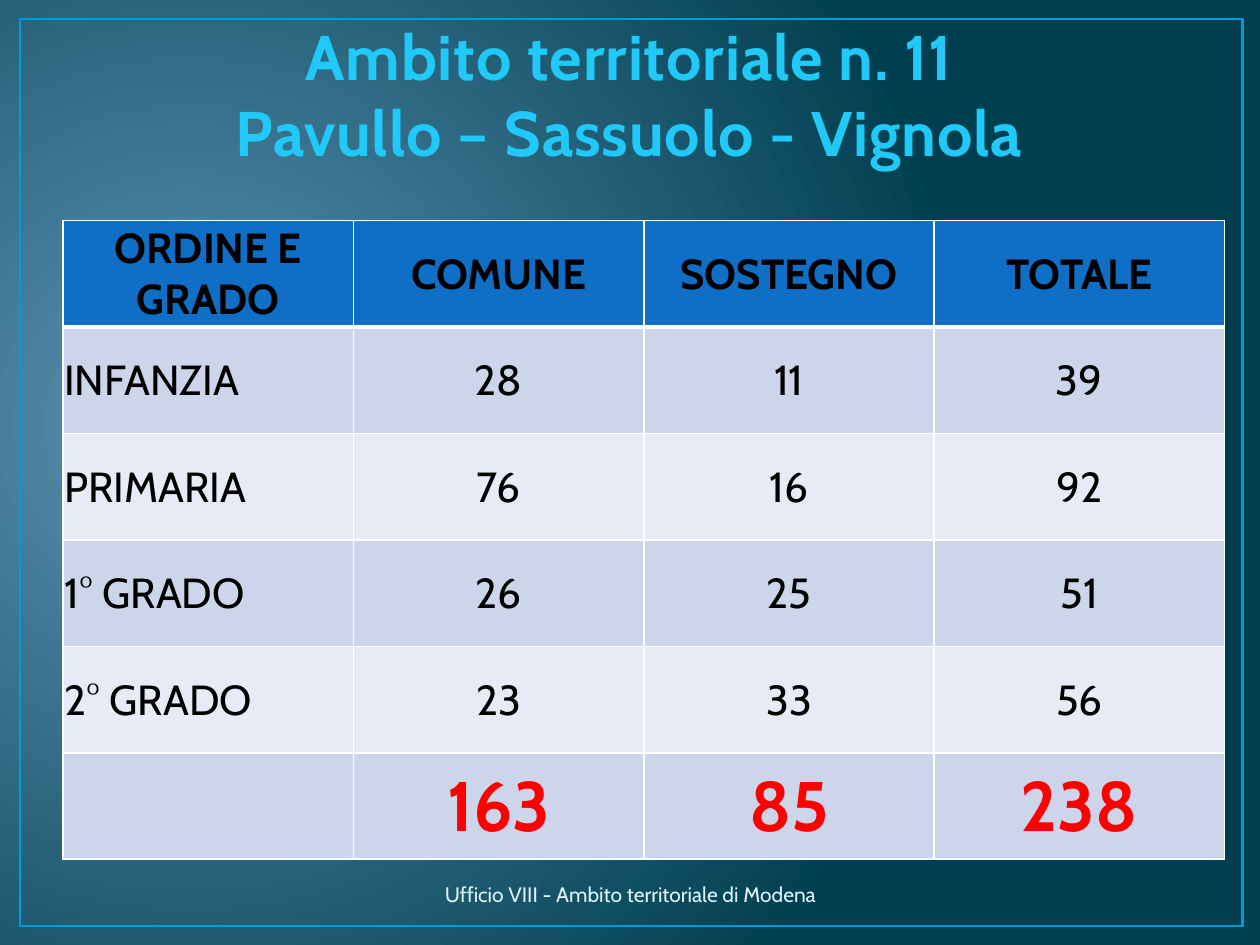
from dataclasses import dataclass
from lxml.etree import SubElement
from pptx import Presentation
from pptx.dml.color import RGBColor as RGB
from pptx.enum.shapes import MSO_SHAPE as SHAPE
from pptx.enum.text import MSO_ANCHOR as ANCHOR, PP_ALIGN as ALIGN
from pptx.oxml.ns import qn
from pptx.util import Inches, Pt


@dataclass(frozen=True)
class Theme:
    font: str = "Cabin"
    glow: str = "5C92B3"
    deep: str = "003F50"
    frame: str = "009DD9"
    title: str = "20C9F8"
    footer: str = "DBF5F9"
    header: str = "0F6FC6"
    bands: tuple = ("CCD5EA", "E7EBF5")
    border: str = "FFFFFF"
    ink: str = "000000"
    total: str = "FF0000"
    title_size: int = 36
    cell_size: int = 24
    total_size: int = 40
    footer_size: int = 12


def apply(target, values):
    for name, value in values.items():
        setattr(target, name, value)


class Deck:
    def __init__(self, prs, theme):
        self.theme = theme
        self.slide = prs.slides.add_slide(prs.slide_layouts[6])

    def background(self):
        fill = self.slide.background.fill
        fill.gradient()
        for stop, color in zip(fill.gradient_stops, (self.theme.glow, self.theme.deep)):
            stop.color.rgb = RGB.from_string(color)
        lin = self.slide.element.find(".//" + qn("a:lin"))
        grad = lin.getparent()
        grad.remove(lin)
        circle = SubElement(grad, qn("a:path"), {"path": "circle"})
        SubElement(circle, qn("a:fillToRect"),
                   {"l": "15000", "t": "50000", "r": "85000", "b": "60000"})

    def frame(self, *box):
        sp = self.slide.shapes.add_shape(SHAPE.RECTANGLE, *map(Inches, box))
        sp.shadow.inherit = False
        sp.fill.background()
        sp.line.color.rgb = RGB.from_string(self.theme.frame)
        sp.line.width = Pt(1.5)

    def fill_text(self, tf, text, size, color, bold=False, align=ALIGN.CENTER, spacing=0):
        p = tf.paragraphs[0]
        p.alignment = align
        for i, line in enumerate(text.split("\n")):
            if i:
                p.add_line_break()
            r = p.add_run()
            r.text = line
            apply(r.font, {"name": self.theme.font, "size": Pt(size), "bold": bold})
            r.font.color.rgb = RGB.from_string(color)
            if spacing:
                r._r.get_or_add_rPr().set("spc", str(spacing))

    def text(self, box, text, size, color, anchor, **style):
        tf = self.slide.shapes.add_textbox(*map(Inches, box)).text_frame
        apply(tf, {"word_wrap": True, "vertical_anchor": anchor})
        self.fill_text(tf, text, size, color, **style)

    def cell(self, cell, text, fill, top, bottom, **style):
        apply(cell, {"vertical_anchor": ANCHOR.MIDDLE, "margin_left": Inches(0.01),
                     "margin_right": Inches(0.01), "margin_top": Inches(0.01),
                     "margin_bottom": 0})
        tcPr = cell._tc.get_or_add_tcPr()
        for side, width in {"L": 1, "R": 1, "T": top, "B": bottom}.items():
            ln = SubElement(tcPr, qn("a:ln" + side), {"w": str(Pt(width))})
            solid = SubElement(ln, qn("a:solidFill"))
            SubElement(solid, qn("a:srgbClr"), {"val": self.theme.border})
        cell.fill.solid()
        cell.fill.fore_color.rgb = RGB.from_string(fill)
        if text:
            self.fill_text(cell.text_frame, text, **style)

    def table(self, box, rows):
        t = self.theme
        table = self.slide.shapes.add_table(len(rows), len(rows[0]), *map(Inches, box)).table
        last = len(rows) - 1
        for i, row in enumerate(rows):
            fill = t.bands[(i - 1) % 2] if i else t.header
            style = {"size": t.total_size if i == last else t.cell_size,
                     "color": t.total if i == last else t.ink,
                     "bold": i in (0, last),
                     "top": 3 if i == 1 else 1,
                     "bottom": 1 if i else 3}
            for j, text in enumerate(row):
                align = ALIGN.LEFT if i and not j else ALIGN.CENTER
                self.cell(table.cell(i, j), text, fill, align=align, **style)


ROWS = [
    ("ORDINE E GRADO", "COMUNE", "SOSTEGNO", "TOTALE"),
    ("INFANZIA", "28", "11", "39"),
    ("PRIMARIA", "76", "16", "92"),
    ("1° GRADO", "26", "25", "51"),
    ("2° GRADO", "23", "33", "56"),
    ("", "163", "85", "238"),
]


def main():
    prs = Presentation()
    apply(prs, {"slide_width": Inches(10), "slide_height": Inches(7.5)})
    theme = Theme()
    deck = Deck(prs, theme)
    deck.background()
    deck.frame(0.16, 0.15, 9.7, 7.2)
    deck.text((0.5, 0.13, 9, 1.26), "Ambito territoriale n. 11\nPavullo – Sassuolo - Vignola",
              theme.title_size, theme.title, ANCHOR.BOTTOM, bold=True, spacing=50)
    deck.table((0.5, 1.75, 9.22, 5.07), ROWS)
    deck.text((3.1, 6.9, 3.81, 0.4), "Ufficio VIII - Ambito territoriale di Modena",
              theme.footer_size, theme.footer, ANCHOR.MIDDLE)
    prs.save("out.pptx")


if __name__ == "__main__":
    main()
